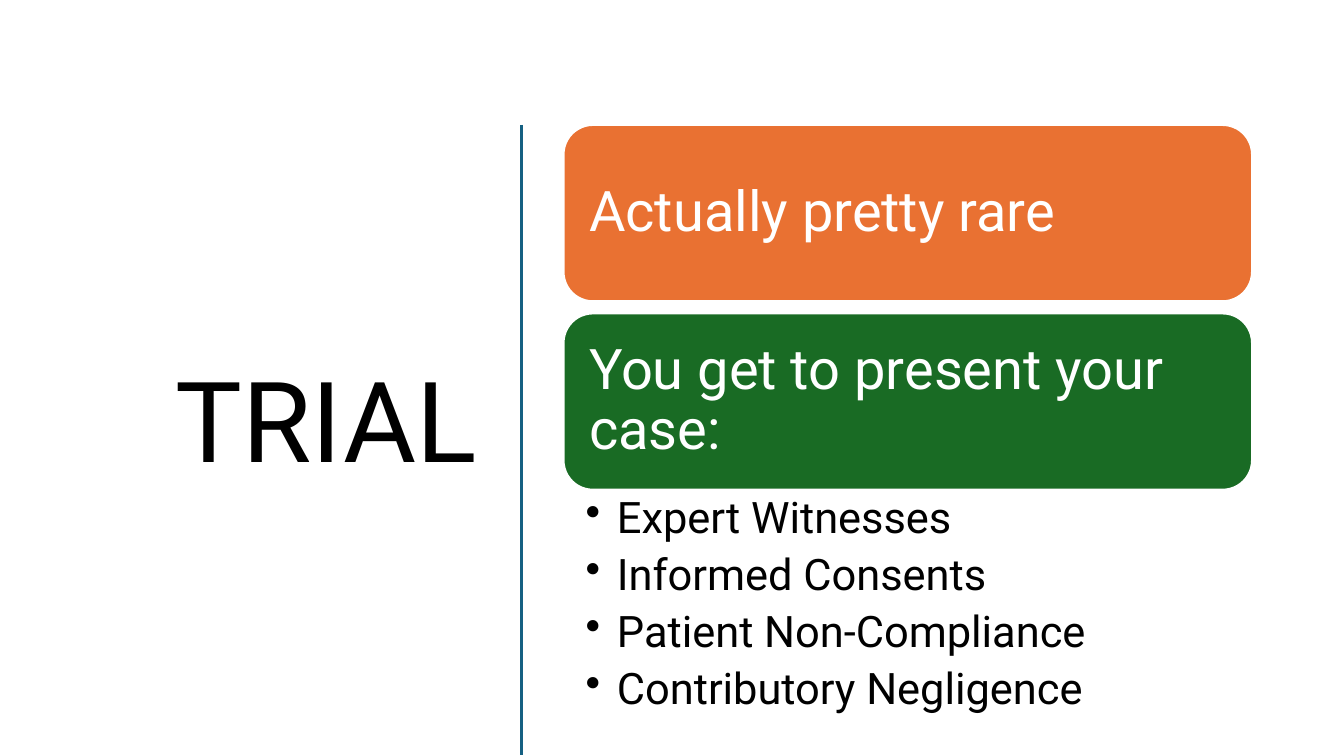
"""Build the TRIAL slide: a title, a divider, two cards and a bullet list."""
from dataclasses import dataclass

from lxml import etree
from pptx import Presentation, util as u
from pptx.dml.color import RGBColor
from pptx.enum import shapes, text
from pptx.oxml.ns import qn

COLORS = {"ink": "000000", "paper": "FFFFFF", "divider": "156082",
          "orange": "E97132", "green": "196B24"}
FONT = "Roboto"
WIDTH, HEIGHT = u.Inches(13.33), u.Inches(7.5)
LEFT, SPAN = 41.93, 51.23
TOP, CARD_HEIGHT, CARD_PITCH = 16.53, 23.33, 24.93


@dataclass(frozen=True)
class Card:
    """A coloured statement."""
    words: str
    color: str


CARDS = [Card("Actually pretty rare", "orange"),
         Card("You get to present your case:", "green")]
EVIDENCE = ["Expert Witnesses", "Informed Consents",
            "Patient Non-Compliance", "Contributory Negligence"]


def across(percent: float) -> int:
    """Return a share of the slide's width."""
    return round(WIDTH * percent / 100)


def down(percent: float) -> int:
    """Return a share of the slide's height."""
    return round(HEIGHT * percent / 100)


def area(left: float, top: float, width: float, height: float) -> tuple[int, ...]:
    """Return a rectangle given as shares of the slide."""
    return across(left), down(top), across(width), down(height)


def paint(color_format, name: str) -> None:
    """Apply a palette colour."""
    color_format.rgb = RGBColor.from_string(COLORS[name])


def write(frame, lines: list[str], *, size: float, color: str = "ink",
          align=text.PP_ALIGN.LEFT, anchor=text.MSO_ANCHOR.MIDDLE,
          insets: tuple[float, ...] = (0.1, 0.05, 0.1, 0.05),
          after: float = 0, hanging: float = 0) -> None:
    """Fill a text frame, with bullets where a hanging indent is given."""
    frame.word_wrap = True
    frame.auto_size = text.MSO_AUTO_SIZE.NONE
    frame.vertical_anchor = anchor
    (frame.margin_left, frame.margin_top,
     frame.margin_right, frame.margin_bottom) = map(u.Inches, insets)
    for index, line in enumerate(lines):
        paragraph = frame.add_paragraph() if index else frame.paragraphs[0]
        if hanging:
            properties = paragraph._p.get_or_add_pPr()
            properties.set("marL", str(u.Inches(hanging)))
            properties.set("indent", str(-u.Inches(hanging)))
            etree.SubElement(properties, qn("a:buChar"), char="•")
        paragraph.alignment = align
        paragraph.line_spacing = 0.9
        paragraph.space_before = u.Pt(0)
        paragraph.space_after = u.Pt(after)
        run = paragraph.add_run()
        run.text = line
        run.font.name, run.font.size = FONT, u.Pt(size)
        paint(run.font.color, color)


def add_divider(slide) -> None:
    """Draw the vertical rule between title and content."""
    x = across(38.78)
    divider = slide.shapes.add_connector(
        shapes.MSO_CONNECTOR.STRAIGHT, x, down(TOP), x, down(99.87))
    paint(divider.line.color, "divider")
    divider.line.width = u.Pt(2)
    etree.SubElement(divider._element.spPr, qn("a:effectLst"))


def add_card(slide, card: Card, row: int) -> None:
    """Draw one rounded statement card."""
    box = slide.shapes.add_shape(
        shapes.MSO_SHAPE.ROUNDED_RECTANGLE,
        *area(LEFT, TOP + row * CARD_PITCH, SPAN, CARD_HEIGHT))
    box.shadow.inherit = False
    box.fill.solid()
    paint(box.fill.fore_color, card.color)
    paint(box.line.color, "paper")
    box.line.width = u.Pt(1.5)
    write(box.text_frame, [card.words], size=40, color="paper",
          insets=(0.17, 0.17, 0.17, 0.17))


def main() -> None:
    """Assemble and save the slide."""
    deck = Presentation()
    deck.slide_width, deck.slide_height = WIDTH, HEIGHT
    slide = deck.slides.add_slide(deck.slide_layouts[5])
    title = slide.shapes.title
    title.left, title.top, title.width, title.height = area(3.9, 15.6, 32.33, 81.47)
    write(title.text_frame, ["TRIAL"], size=80, align=text.PP_ALIGN.RIGHT)
    add_divider(slide)
    for row, card in enumerate(CARDS):
        add_card(slide, card, row)
    evidence = slide.shapes.add_textbox(*area(LEFT, 64.8, SPAN, 31.33))
    write(evidence.text_frame, EVIDENCE, size=31, anchor=text.MSO_ANCHOR.TOP,
          insets=(0.22, 0.06, 0.31, 0.06), after=7.2, hanging=0.31)
    deck.save("out.pptx")


if __name__ == "__main__":
    main()
